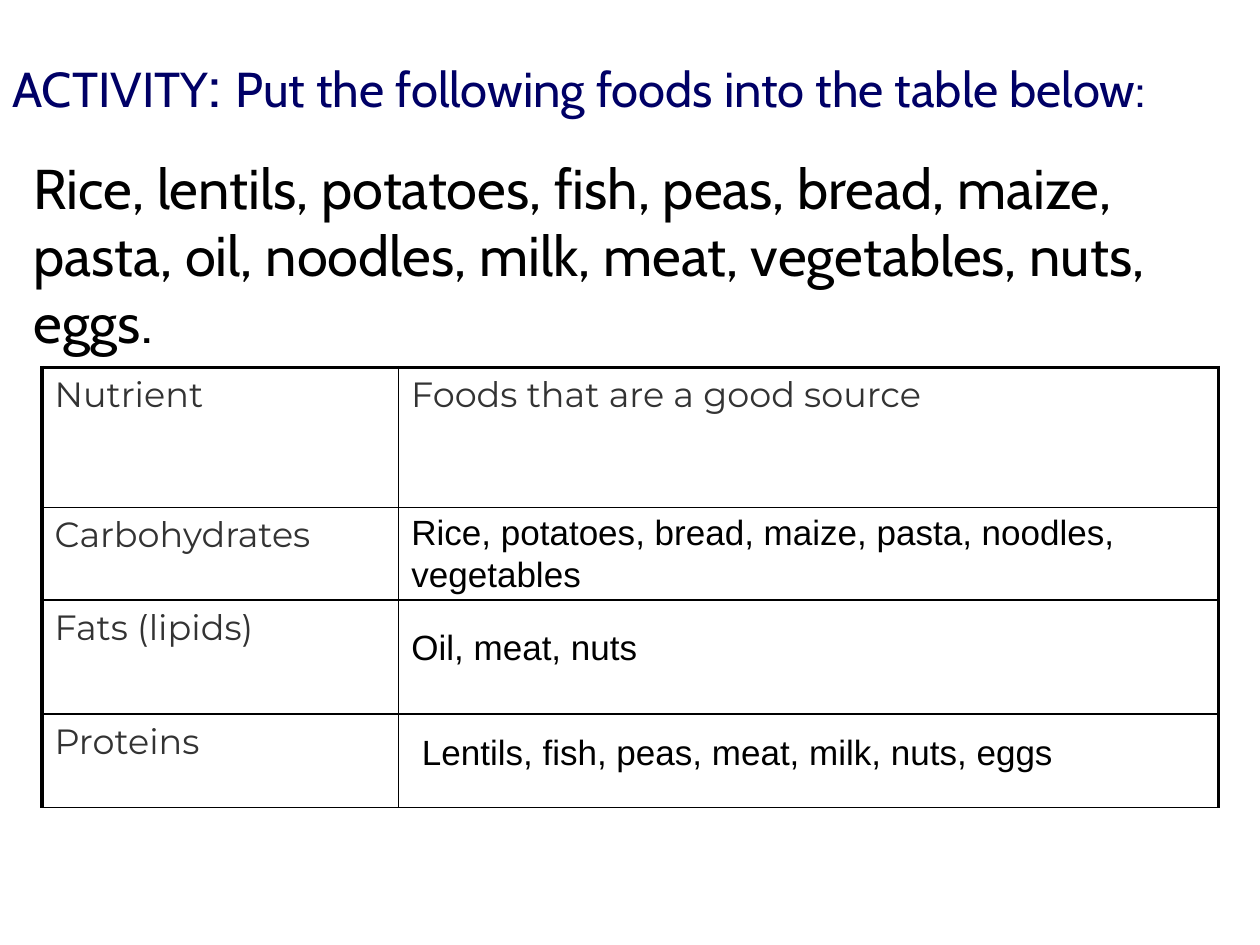
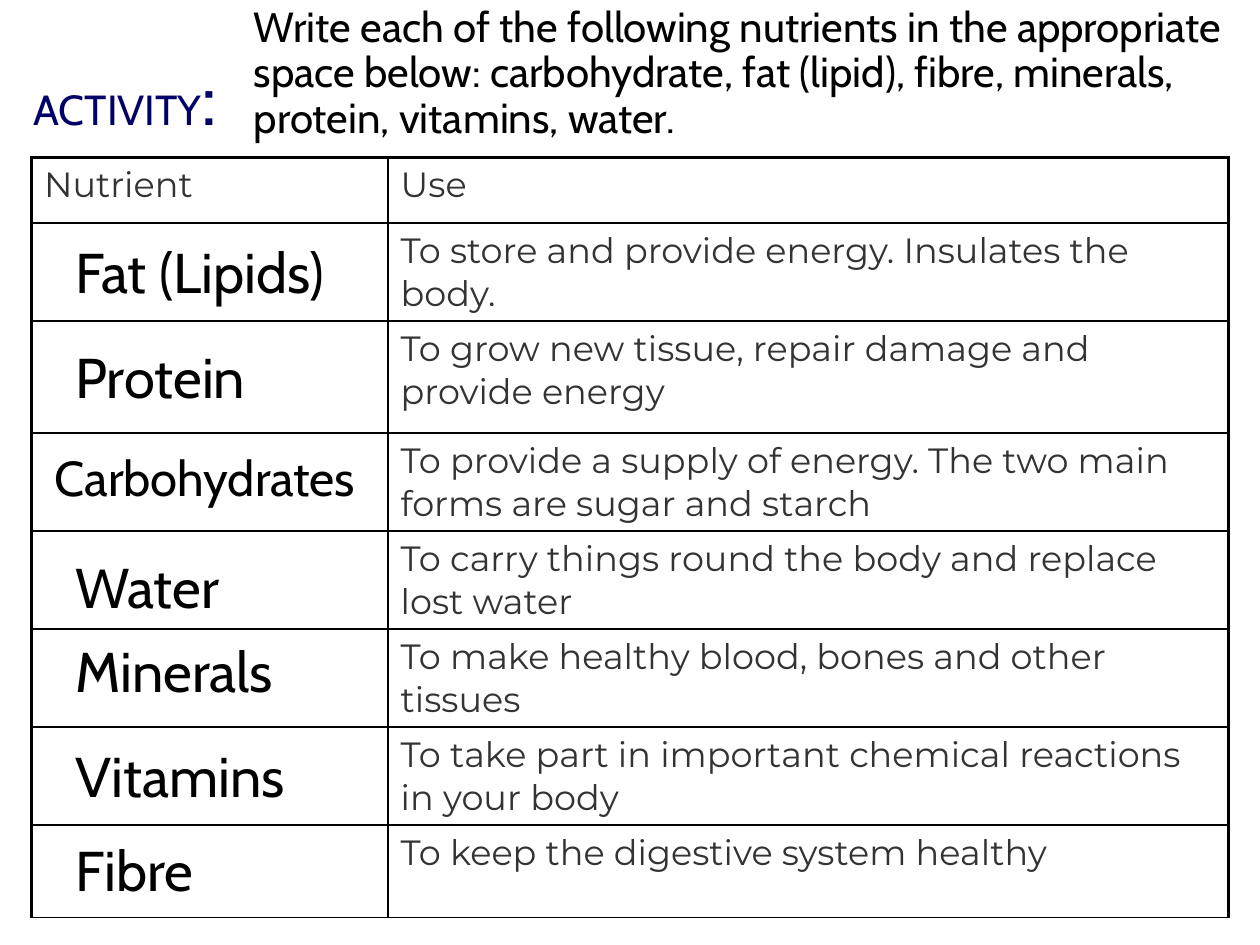
"""Builds two classroom slides on nutrients, each a task above a ruled table."""
from lxml import etree
from pptx import Presentation
from pptx.dml.color import RGBColor
from pptx.enum import text
from pptx.oxml.ns import qn
from pptx.util import Pt

NAVY = RGBColor(0x00, 0x00, 0x66)
BLACK = RGBColor(0x00, 0x00, 0x00)
GREY = RGBColor(0x33, 0x33, 0x33)
HEAD, CELL, PLAIN = "Cabin", "Montserrat", "Arial"
THICK, THIN = 2.25, 1

FOODS = {
    "title": ((0, 0, 720, 72), [
        ("ACTIVITY", 28), (": ", 36),
        ("Put the following foods into the table below:", 28)]),
    "task": ((12, 84, 708, 432), 32, 1,
             "Rice, lentils, potatoes, fish, peas, bread, maize, pasta, oil, "
             "noodles, milk, meat, vegetables, nuts, eggs."),
    "place": (24, 210),
    "cols": (203.8, 468.4),
    "rows": [
        (80, "Nutrient", "Foods that are a good source"),
        (53, "Carbohydrates", ""),
        (65, "Fats (lipids)", ""),
        (53.5, "Proteins", ""),
    ],
    "font": PLAIN,
    "notes": [
        (228, 288, 444, 20, "Rice, potatoes, bread, maize, pasta, noodles, vegetables"),
        (228, 354, 444, 20, "Oil, meat, nuts"),
        (234, 414, 444, 20, "Lentils, fish, peas, meat, milk, nuts, eggs"),
    ],
}

USES = {
    "title": ((12, 12, 696, 72), [("ACTIVITY", 24), (":", 44)]),
    "task": ((138, 0, 582, 84), 24, 0.9,
             "Write each of the following nutrients in the appropriate space "
             "below: carbohydrate, fat (lipid), fibre, minerals, protein, "
             "vitamins, water."),
    "place": (18, 90),
    "cols": (203.8, 480.2),
    "rows": [
        (37.5, "Nutrient", "Use"),
        (56, "", "To store and provide energy. Insulates the body."),
        (64, "", "To grow new tissue, repair damage and provide energy"),
        (56, "", "To provide a supply of energy. The two main forms are sugar and starch"),
        (56, "", "To carry things round the body and replace lost water"),
        (56, "", "To make healthy blood, bones and other tissues"),
        (56, "", "To take part in important chemical reactions in your body"),
        (53, "", "To keep the digestive system healthy"),
    ],
    "font": HEAD,
    "notes": [
        (36, 132, 180, 32, "Fat (Lipids)"),
        (36, 192, 168, 32, "Protein"),
        (24, 252, 204, 28, "Carbohydrates"),
        (36, 312, 180, 32, "Water"),
        (36, 360, 180, 32, "Minerals"),
        (36, 420, 168, 32, "Vitamins"),
        (36, 474, 174, 32, "Fibre"),
    ],
}


def style(font, name, size, tint):
    font.name, font.size, font.color.rgb = name, Pt(size), tint


def add_box(slide, place):
    frame = slide.shapes.add_textbox(*map(Pt, place)).text_frame
    frame.word_wrap = True
    return frame


def add_title(slide, place, runs):
    frame = add_box(slide, place)
    frame.vertical_anchor = text.MSO_ANCHOR.BOTTOM
    for words, size in runs:
        run = frame.paragraphs[0].add_run()
        run.text = words
        style(run.font, HEAD, size, NAVY)


def add_text(slide, place, size, words, name, space=1):
    para = add_box(slide, place).paragraphs[0]
    para.text, para.line_spacing = words, space
    style(para.font, name, size, BLACK)


def add_rule(cell, side, width):
    line = etree.SubElement(cell._tc.get_or_add_tcPr(), qn("a:ln" + side), w=str(Pt(width)))
    fill = etree.SubElement(line, qn("a:solidFill"))
    etree.SubElement(fill, qn("a:srgbClr"), val=str(BLACK))


def add_grid(slide, place, cols, rows):
    size = sum(cols), sum(row[0] for row in rows)
    grid = slide.shapes.add_table(len(rows), len(cols), *map(Pt, place + size)).table
    grid.first_row = grid.horz_banding = False
    for col, width in zip(grid.columns, cols):
        col.width = Pt(width)
    for r, (height, *words) in enumerate(rows):
        grid.rows[r].height = Pt(height)
        for c, word in enumerate(words):
            cell = grid.cell(r, c)
            outer = {"L": c == 0, "R": c == len(cols) - 1, "T": r == 0, "B": False}
            for side, edge in outer.items():
                add_rule(cell, side, THICK if edge else THIN)
            cell.fill.background()
            para = cell.text_frame.paragraphs[0]
            para.text = word
            style(para.font, CELL, 20, GREY)


def add_page(deck, page):
    slide = deck.slides.add_slide(deck.slide_layouts[6])
    add_title(slide, *page["title"])
    place, size, space, words = page["task"]
    add_text(slide, place, size, words, HEAD, space)
    add_grid(slide, page["place"], page["cols"], page["rows"])
    for left, top, width, size, words in page["notes"]:
        add_text(slide, (left, top, width, size * 1.2 + 7.2), size, words, page["font"])


def main():
    deck = Presentation()
    deck.slide_width, deck.slide_height = Pt(720), Pt(540)
    for page in (FOODS, USES):
        add_page(deck, page)
    deck.save("out.pptx")


if __name__ == "__main__":
    main()
